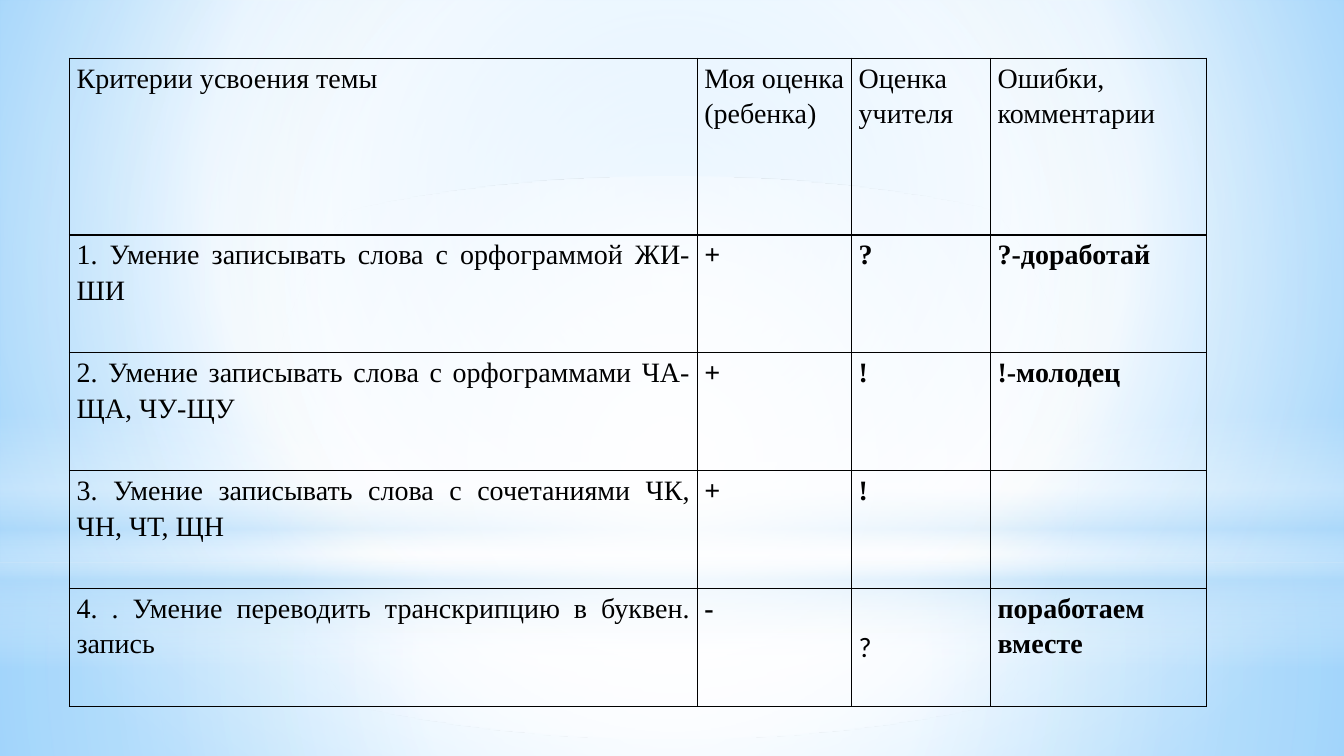
from lxml import etree
from pptx import Presentation
from pptx.dml.color import RGBColor
from pptx.enum.shapes import MSO_SHAPE
from pptx.enum.text import PP_ALIGN
from pptx.oxml import parse_xml
from pptx.oxml.ns import nsdecls, qn
from pptx.util import Cm, Pt

RECT, OVAL = MSO_SHAPE.RECTANGLE, MSO_SHAPE.OVAL
JUSTIFY, LEFT = PP_ALIGN.JUSTIFY, PP_ALIGN.LEFT

SLIDE_WIDTH, SLIDE_HEIGHT = 33.87, 19.05
CENTRE = (50, 50, 50, 50)
BACKDROP = [(0, "9ED5FF", 100), (60, "FFFFFF", 100), (100, "5BB9FF", 100)]
BACKDROP_FOCUS = (20, 10, 20, 60)
GLOWS = [
    (RECT, 14.17, 4.88, CENTRE,
     [(0, "FFFFFF", 91), (37, "FFFFFF", 76), (100, "B4DCFA", 79)]),
    (RECT, 0, 14.17, CENTRE,
     [(0, "FFFFFF", 89), (48, "FFFFFF", 62), (100, "B4DCFA", 79)]),
    (RECT, 10.46, 6.35, None,
     [(0, "FFFFFF", 0), (29, "FFFFFF", 30), (45, "B4DCFA", 40),
      (55, "FFFFFF", 26), (65, "B4DCFA", 60), (100, "FFFFFF", 0)]),
    (OVAL, 4.45, 14.17, CENTRE, [(0, "FFFFFF", 100), (56, "FFFFFF", 0)]),
]

TABLE_LEFT, TABLE_TOP = 1.75, 1.47
COLUMNS = [15.82, 3.89, 3.5, 5.44]
ROWS = [4.45] + [2.97] * 4
CRITERIA = [
    ["Критерии усвоения темы", "Моя оценка\n(ребенка)", "Оценка учителя", "Ошибки, комментарии"],
    ["1. Умение записывать слова с орфограммой ЖИ-ШИ", "+", "?", "?-доработай"],
    ["2. Умение записывать слова с орфограммами ЧА-ЩА, ЧУ-ЩУ", "+", "!", "!-молодец"],
    ["3. Умение записывать слова с сочетаниями ЧК, ЧН, ЧТ, ЩН", "+", "!", ""],
    ["4. . Умение переводить транскрипцию в буквен. запись", "-", "?", "поработаем вместе"],
]
PLAIN_MARK = (4, 2)
MARK_DROP = 0.93
MARGINS = {"margin_left": Cm(0.18), "margin_right": Cm(0.18), "margin_top": 0, "margin_bottom": 0}


def colour(code):
    return RGBColor.from_string(code)


def apply(target, formats):
    for name, value in formats.items():
        setattr(target, name, value)


def set_gradient(filled, element, stops, focus):
    """Replace the fill with a circular gradient, or a vertical one when focus is None."""
    filled.fill.background()
    marks = "".join(
        f'<a:gs pos="{place * 1000}"><a:srgbClr val="{code}">'
        f'<a:alpha val="{opacity * 1000}"/></a:srgbClr></a:gs>'
        for place, code, opacity in stops)
    if focus:
        sides = " ".join(f'{side}="{share * 1000}"' for side, share in zip("ltrb", focus))
        course = f'<a:path path="circle"><a:fillToRect {sides}/></a:path>'
    else:
        course = '<a:lin ang="5400000" scaled="0"/>'
    gradient = parse_xml(f'<a:gradFill {nsdecls("a")} rotWithShape="1">'
                         f'<a:gsLst>{marks}</a:gsLst>{course}</a:gradFill>')
    empty = next(element.iter(qn("a:noFill")))
    empty.getparent().replace(empty, gradient)


def add_borders(cell):
    properties = cell._tc.get_or_add_tcPr()
    for side in "LRTB":
        line = etree.SubElement(properties, qn(f"a:ln{side}"), w=str(Pt(1)))
        solid = etree.SubElement(line, qn("a:solidFill"))
        etree.SubElement(solid, qn("a:srgbClr"), val="000000")


def fill_cell(cell, text, bold, plain_mark):
    add_borders(cell)
    cell.fill.background()
    apply(cell, MARGINS)
    if plain_mark:
        cell.margin_top = Cm(MARK_DROP)
    if not text:
        return
    cell.text = text
    for para in cell.text_frame.paragraphs:
        apply(para, {"alignment": LEFT if plain_mark else JUSTIFY, "line_spacing": 1.15})
        for span in para.runs:
            apply(span.font, {"name": "Calibri" if plain_mark else "Times New Roman",
                              "size": Pt(20), "bold": bold and not plain_mark})
            span.font.color.rgb = colour("000000")


def add_glows(page):
    for form, top, height, focus, stops in GLOWS:
        glow = page.shapes.add_shape(form, 0, Cm(top), Cm(SLIDE_WIDTH), Cm(height))
        glow.shadow.inherit = False
        set_gradient(glow, glow._element, stops, focus)
        glow.line.fill.background()


def add_criteria(page):
    table = page.shapes.add_table(len(ROWS), len(COLUMNS), Cm(TABLE_LEFT), Cm(TABLE_TOP),
                                  Cm(sum(COLUMNS)), Cm(sum(ROWS))).table
    apply(table, {"first_row": False, "horz_banding": False})
    for column, width in zip(table.columns, COLUMNS):
        column.width = Cm(width)
    for row, height in zip(table.rows, ROWS):
        row.height = Cm(height)
    for r, texts in enumerate(CRITERIA):
        for c, text in enumerate(texts):
            fill_cell(table.cell(r, c), text, r > 0 and c > 0, (r, c) == PLAIN_MARK)


def main():
    deck = Presentation()
    apply(deck, {"slide_width": Cm(SLIDE_WIDTH), "slide_height": Cm(SLIDE_HEIGHT)})
    page = deck.slides.add_slide(deck.slide_layouts[6])
    set_gradient(page.background, page._element, BACKDROP, BACKDROP_FOCUS)
    add_glows(page)
    add_criteria(page)
    deck.save("out.pptx")


if __name__ == "__main__":
    main()
